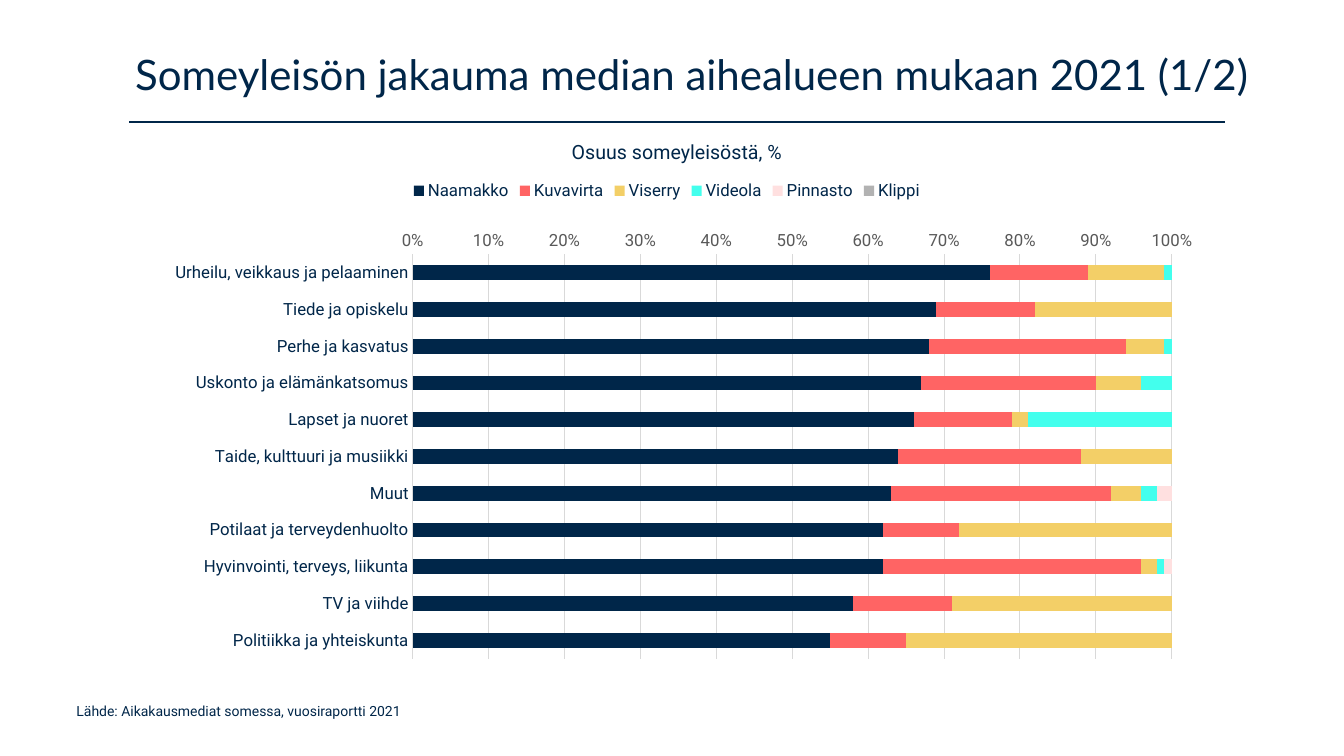
"""Builds a slide with a stacked bar chart of social media audiences by topic."""
from lxml.etree import SubElement as Sub
from pptx import Presentation
from pptx.chart.data import CategoryChartData as Data
from pptx.dml.color import RGBColor
from pptx.enum.chart import XL_CHART_TYPE as Kind
from pptx.enum.chart import XL_LEGEND_POSITION as Spot
from pptx.enum.chart import XL_TICK_MARK as Tick
from pptx.enum.shapes import MSO_CONNECTOR as Link
from pptx.enum.text import MSO_ANCHOR as Anchor
from pptx.enum.text import PP_ALIGN as Align
from pptx.oxml.ns import qn
from pptx.util import Pt

NAVY = RGBColor(0x00, 0x26, 0x49)
CORAL = RGBColor(0xFF, 0x64, 0x64)
GOLD = RGBColor(0xF3, 0xCF, 0x67)
AQUA = RGBColor(0x43, 0xFF, 0xED)
BLUSH = RGBColor(0xFF, 0xE0, 0xE0)
SILVER = RGBColor(0xB2, 0xB2, 0xB2)
GRID = RGBColor(0xD9, 0xD9, 0xD9)
GREY = RGBColor(0x59, 0x59, 0x59)
TOPICS = [
    "Urheilu, veikkaus ja pelaaminen",
    "Tiede ja opiskelu",
    "Perhe ja kasvatus",
    "Uskonto ja elämänkatsomus",
    "Lapset ja nuoret",
    "Taide, kulttuuri ja musiikki",
    "Muut",
    "Potilaat ja terveydenhuolto",
    "Hyvinvointi, terveys, liikunta",
    "TV ja viihde",
    "Politiikka ja yhteiskunta",
]
SHARES = [
    ("Naamakko", NAVY, [76, 69, 68, 67, 66, 64, 63, 62, 62, 58, 55]),
    ("Kuvavirta", CORAL, [13, 13, 26, 23, 13, 24, 29, 10, 34, 13, 10]),
    ("Viserry", GOLD, [10, 18, 5, 6, 2, 12, 4, 28, 2, 29, 35]),
    ("Videola", AQUA, [1, 0, 1, 4, 19, 0, 2, 0, 1, 0, 0]),
    ("Pinnasto", BLUSH, [0, 0, 0, 0, 0, 0, 2, 0, 1, 0, 0]),
    ("Klippi", SILVER, [0] * len(TOPICS)),
]
PLOT = {"x": 0.268, "y": 0.168, "w": 0.693, "h": 0.799}


def set_font(font, size, color=NAVY, name="Roboto"):
    font.size, font.name, font.bold = Pt(size), name, False
    font.color.rgb = color


def place(shape, left, top, width, height):
    shape.left, shape.top = Pt(left), Pt(top)
    shape.width, shape.height = Pt(width), Pt(height)


def add_title(slide, text):
    title = slide.shapes.title
    place(title, 85, 29.5, 818.6, 51)
    frame = title.text_frame
    frame.text = text
    frame.vertical_anchor = Anchor.MIDDLE
    para = frame.paragraphs[0]
    para.alignment, para.line_spacing = Align.CENTER, 0.9
    set_font(para.runs[0].font, 30, name="Lato")


def add_text(slide, text, box, size, align=Align.LEFT):
    frame = slide.shapes.add_textbox(*map(Pt, box)).text_frame
    frame.word_wrap = True
    frame.text = text
    para = frame.paragraphs[0]
    para.alignment = align
    set_font(para.runs[0].font, size)


def add_rule(slide, left, right, top):
    ends = map(Pt, (left, top, right, top))
    rule = slide.shapes.add_connector(Link.STRAIGHT, *ends)
    rule.line.color.rgb, rule.line.width = NAVY, Pt(1)
    Sub(rule.element.spPr, qn("a:effectLst"))


def style_axis(axis, color):
    axis.major_tick_mark = axis.minor_tick_mark = Tick.NONE
    set_font(axis.tick_labels.font, 12, color)


def draw_line(line):
    line.color.rgb, line.width = GRID, Pt(0.75)


def fix_plot(chart):
    area = chart.element.chart.plotArea
    for old in area.findall(qn("c:layout")):
        area.remove(old)
    layout = Sub(area, qn("c:layout"))
    area.insert(0, layout)
    manual = Sub(layout, qn("c:manualLayout"))
    Sub(manual, qn("c:layoutTarget")).set("val", "inner")
    for key in "xy":
        Sub(manual, qn(f"c:{key}Mode")).set("val", "edge")
    for key, part in PLOT.items():
        Sub(manual, qn(f"c:{key}")).set("val", str(part))


def add_bars(slide, box):
    data = Data()
    data.categories = TOPICS
    for name, _, vals in SHARES:
        data.add_series(name, vals)
    kind = Kind.BAR_STACKED_100
    chart = slide.shapes.add_chart(kind, *map(Pt, box), data).chart
    chart.has_title = False
    set_font(chart.font, 10)
    chart.has_legend = True
    chart.legend.position = Spot.TOP
    chart.legend.include_in_layout = False
    set_font(chart.legend.font, 12)

    plot = chart.plots[0]
    plot.gap_width, plot.overlap = 150, 100
    plot.vary_by_categories = False
    for bars, (_, color, _) in zip(plot.series, SHARES):
        bars.format.fill.solid()
        bars.format.fill.fore_color.rgb = color

    topics, shares = chart.category_axis, chart.value_axis
    style_axis(topics, NAVY)
    topics.reverse_order = True
    draw_line(topics.format.line)
    style_axis(shares, GREY)
    shares.format.line.fill.background()
    shares.minimum_scale, shares.maximum_scale = 0, 1
    shares.major_unit = 0.1
    shares.tick_labels.number_format = "0%"
    shares.tick_labels.number_format_is_linked = False
    draw_line(shares.major_gridlines.format.line)
    fix_plot(chart)


def main():
    deck = Presentation()
    deck.slide_width, deck.slide_height = Pt(960), Pt(540)
    slide = deck.slides.add_slide(deck.slide_layouts[5])
    add_rule(slide, 92.2, 874.8, 87.1)
    add_text(slide, "Lähde: Aikakausmediat somessa, vuosiraportti 2021",
             (47.5, 498.2, 473.8, 31.7), 10)
    add_title(slide, "Someyleisön jakauma median aihealueen mukaan 2021 (1/2)")
    add_text(slide, "Osuus someyleisöstä, %",
             (92.2, 96.5, 782.6, 24.5), 14, Align.CENTER)
    add_bars(slide, (85, 121, 782.6, 361.4))
    deck.save("out.pptx")


if __name__ == "__main__":
    main()
